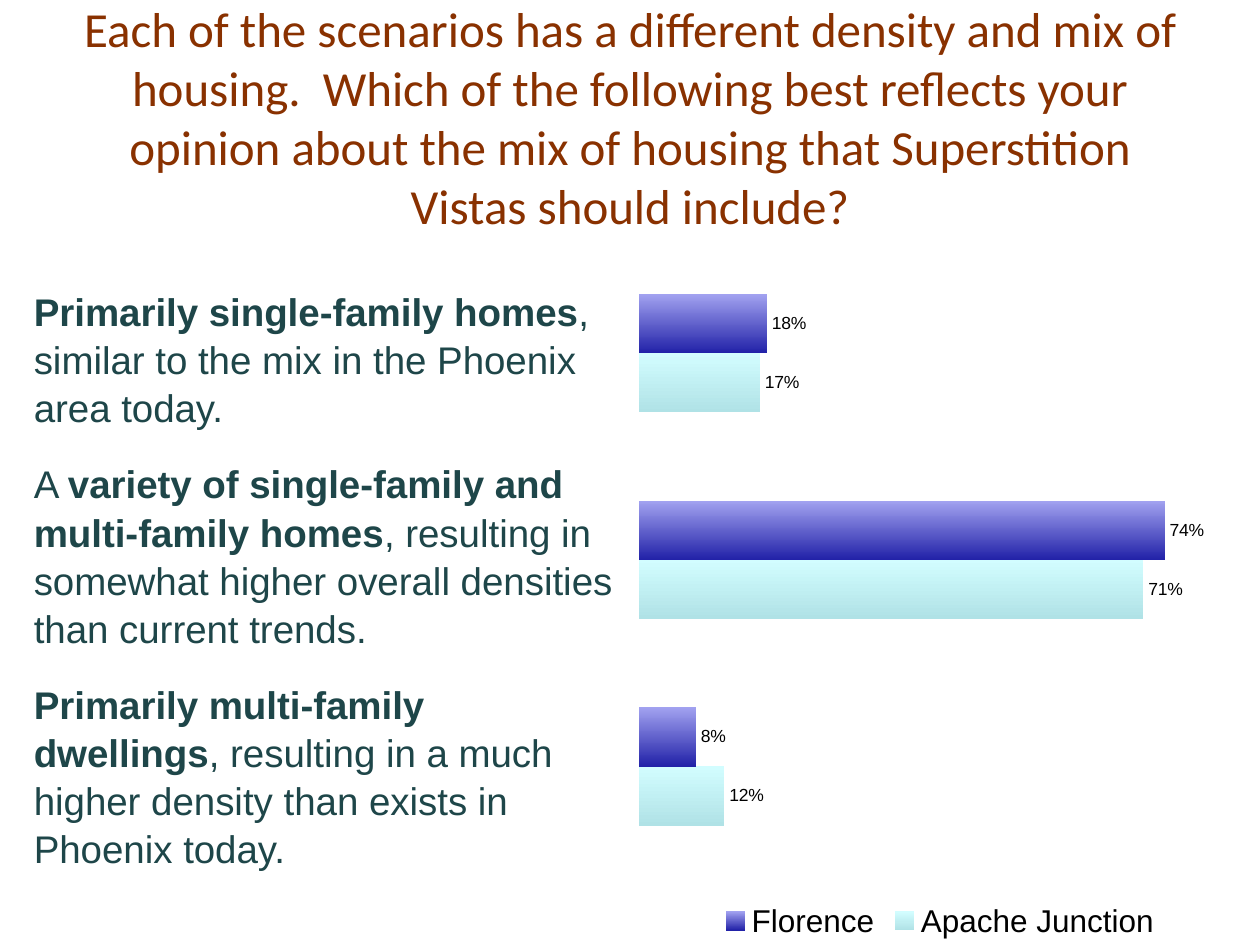
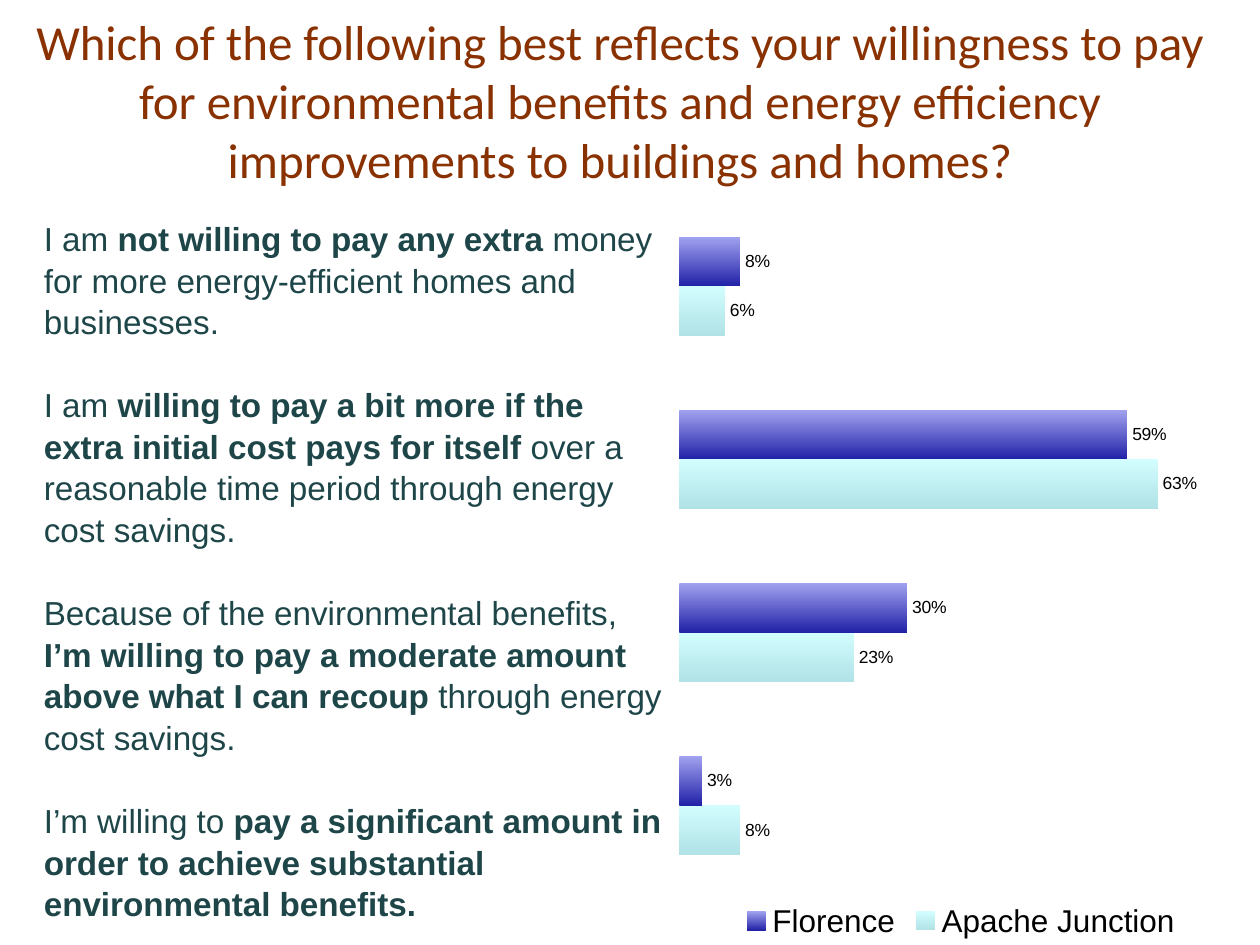
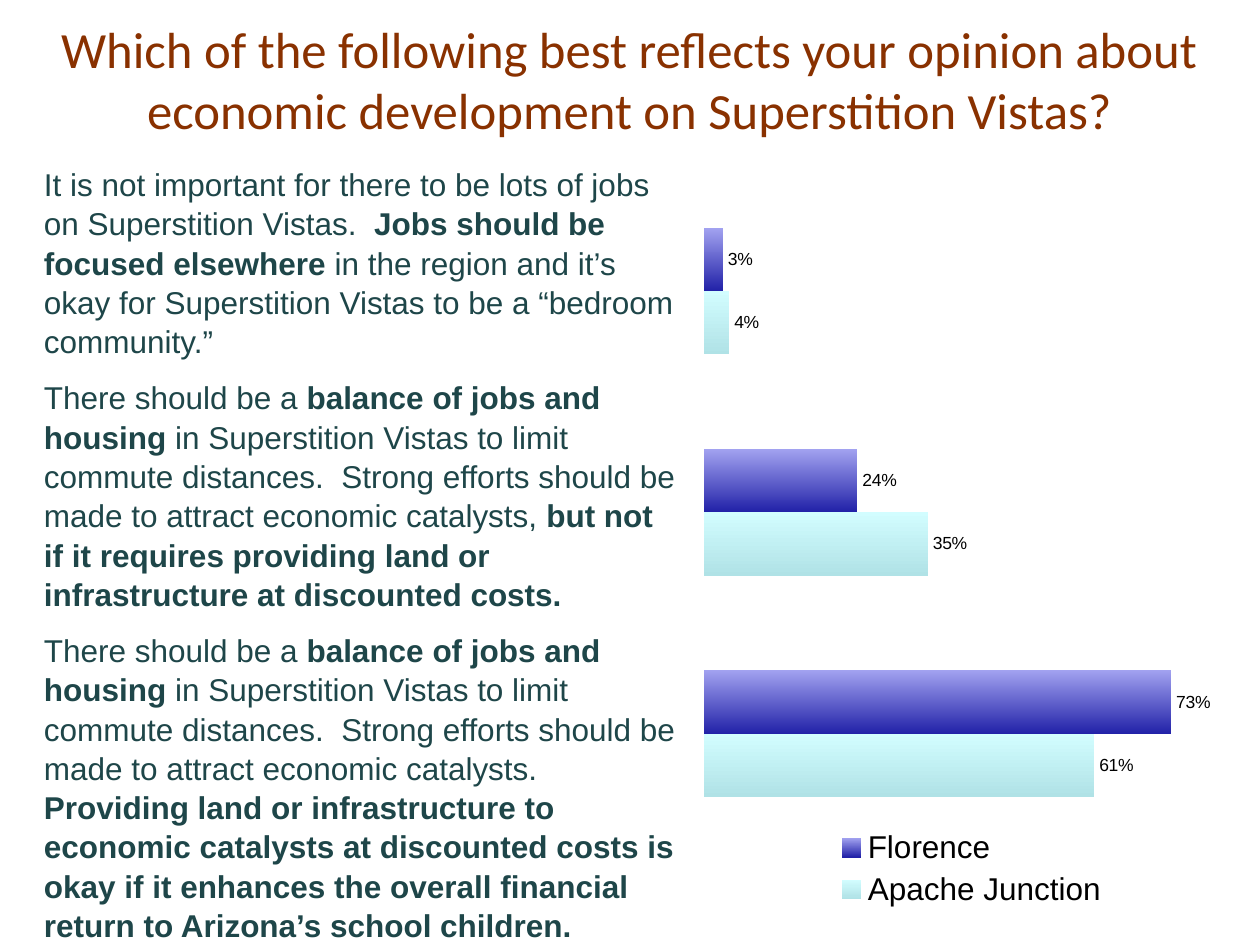
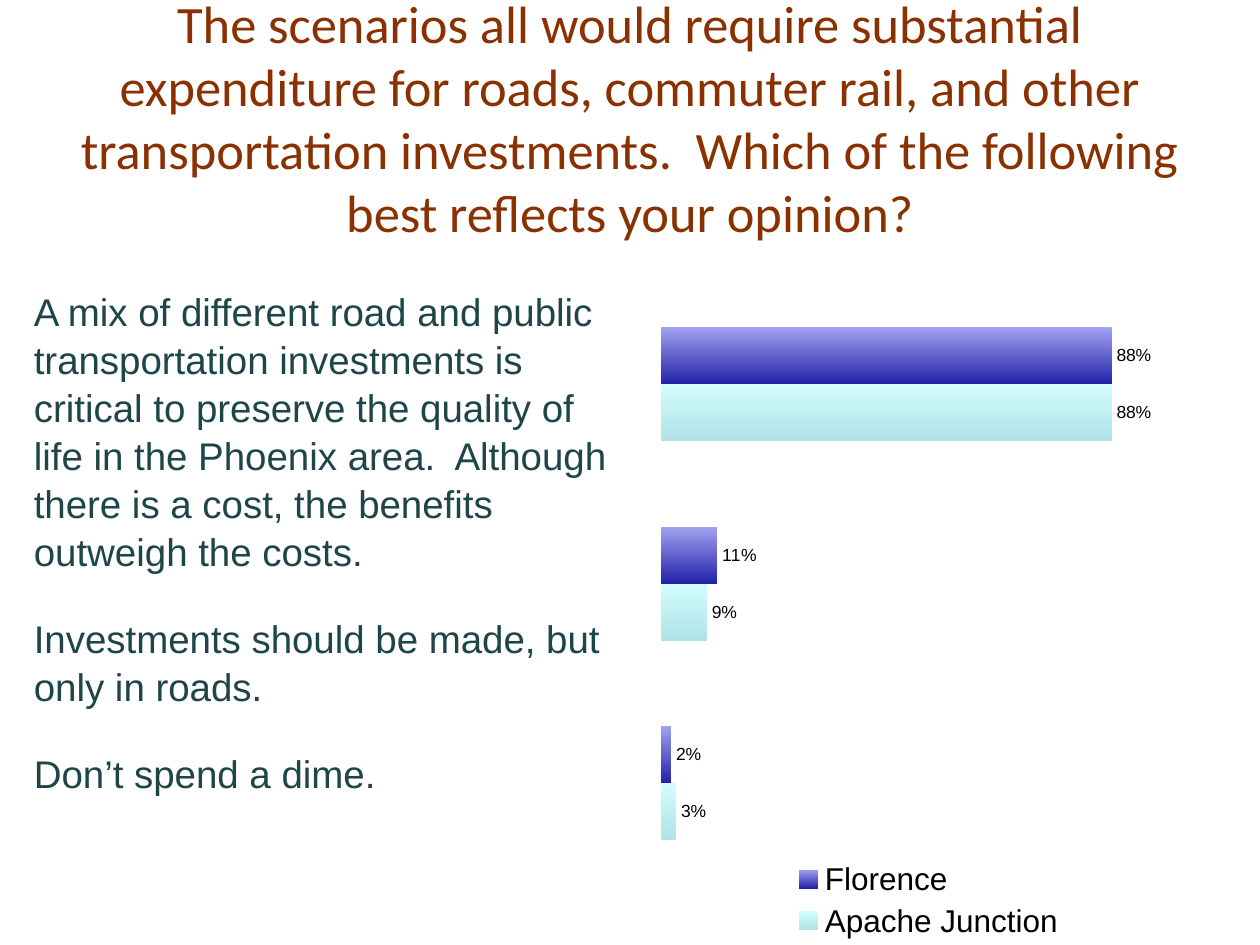
from dataclasses import dataclass

from lxml.etree import SubElement
from pptx import Presentation
from pptx.chart.data import CategoryChartData
from pptx.dml.color import RGBColor
from pptx.enum.chart import XL_CHART_TYPE, XL_LABEL_POSITION, XL_LEGEND_POSITION
from pptx.enum.text import MSO_ANCHOR, MSO_AUTO_SIZE, PP_ALIGN
from pptx.oxml.ns import qn
from pptx.util import Inches, Pt

RUST = RGBColor(0x89, 0x31, 0x00)
DARK_TEAL = RGBColor(0x1E, 0x46, 0x49)
BLACK = RGBColor(0x00, 0x00, 0x00)
TOWN_GRADIENTS = {
    "Apache Junction": (RGBColor(0xD2, 0xFD, 0xFF), RGBColor(0xB0, 0xE2, 0xE6)),
    "Florence": (RGBColor(0xA2, 0xA2, 0xF0), RGBColor(0x22, 0x22, 0xA8)),
}
TITLE_FONT = "Calibri"
BODY_FONT = "Arial"
LINE_SPACING = 1.04


@dataclass
class Question:
    """A survey question, its answers (bold between asterisks) and the votes per town."""

    title: str
    title_size: int
    title_box: tuple
    answers: list
    answer_size: int
    answer_box: tuple
    space_before: float
    space_after: int
    votes: dict
    axis_max: float
    chart_box: tuple
    plot_box: tuple
    inset: float = 0.05


QUESTIONS = [
    Question(
        title="Each of the scenarios has a different density and mix of housing.  Which of the "
        "following best reflects your opinion about the mix of housing that Superstition "
        "Vistas should include?",
        title_size=28,
        title_box=(0.5, 0.3, 9, 1.25),
        answers=[
            "*Primarily single-family homes*, similar to the mix in the Phoenix area today.",
            "A *variety of single-family and multi-family homes*, resulting in somewhat higher "
            "overall densities than current trends.",
            "*Primarily multi-family dwellings*, resulting in a much higher density than exists "
            "in Phoenix today.",
        ],
        answer_size=22,
        answer_box=(0.17, 2.22, 4.83, 4.95),
        space_before=4.4,
        space_after=12,
        votes={"Apache Junction": (0.12, 0.71, 0.17), "Florence": (0.08, 0.74, 0.18)},
        axis_max=0.8,
        chart_box=(4.92, 1.83, 5.08, 5.67),
        plot_box=(0.03, 0.027, 0.888, 0.868),
    ),
    Question(
        title="Which of the following best reflects your willingness to pay for environmental "
        "benefits and energy efficiency improvements to buildings and homes?",
        title_size=28,
        title_box=(0.17, 0.17, 9.5, 1.25),
        answers=[
            "I am *not willing to pay any extra *money for more energy-efficient homes and "
            "businesses.",
            "I am *willing to pay a bit more if the extra initial cost pays for itself *over a "
            "reasonable time period through energy cost savings.",
            "Because of the environmental benefits, *I’m willing to pay a moderate amount above "
            "what I can recoup *through energy cost savings.",
            "I’m willing to *pay a significant amount in order to achieve substantial "
            "environmental benefits.*",
        ],
        answer_size=19,
        answer_box=(0.25, 1.58, 5.17, 5.75),
        space_before=0,
        space_after=24,
        votes={"Apache Junction": (0.08, 0.23, 0.63, 0.06), "Florence": (0.03, 0.3, 0.59, 0.08)},
        axis_max=0.7,
        chart_box=(5.25, 1.42, 4.75, 6.08),
        plot_box=(0.03, 0.027, 0.888, 0.904),
        inset=0.14,
    ),
    Question(
        title="Which of the following best reflects your opinion about economic development on "
        "Superstition Vistas?",
        title_size=29,
        title_box=(0, 0, 10, 1.25),
        answers=[
            "It is not important for there to be lots of jobs on Superstition Vistas.  *Jobs "
            "should be focused elsewhere *in the region and it’s okay for Superstition Vistas "
            "to be a “bedroom community.”",
            "There should be a *balance of jobs and housing *in Superstition Vistas to limit "
            "commute distances.  Strong efforts should be made to attract economic catalysts, "
            "*but not if it requires providing land or infrastructure at discounted costs.*",
            "There should be a *balance of jobs and housing *in Superstition Vistas to limit "
            "commute distances.  Strong efforts should be made to attract economic catalysts.  "
            "*Providing land or infrastructure to economic catalysts at discounted costs is "
            "okay if it enhances the overall financial return to Arizona’s school children.*",
        ],
        answer_size=18,
        answer_box=(0.25, 1.25, 5.25, 5.75),
        space_before=3.6,
        space_after=6,
        votes={"Apache Junction": (0.61, 0.35, 0.04), "Florence": (0.73, 0.24, 0.03)},
        axis_max=0.8,
        chart_box=(5.42, 1.42, 4.58, 5.83),
        plot_box=(0.036, 0.002, 0.888, 0.904),
    ),
    Question(
        title="The scenarios all would require substantial expenditure for roads, commuter "
        "rail, and other transportation investments.  Which of the following best reflects "
        "your opinion?",
        title_size=30,
        title_box=(0.5, 0.3, 9, 1.25),
        answers=[
            "A mix of different road and public transportation investments is critical to "
            "preserve the quality of life in the Phoenix area.  Although there is a cost, the "
            "benefits outweigh the costs.",
            "Investments should be made, but only in roads.",
            "Don’t spend a dime.",
        ],
        answer_size=22,
        answer_box=(0.17, 2.22, 4.92, 4.95),
        space_before=4.4,
        space_after=18,
        votes={"Apache Junction": (0.03, 0.09, 0.88), "Florence": (0.02, 0.11, 0.88)},
        axis_max=1,
        chart_box=(5.08, 2.25, 4.58, 5.25),
        plot_box=(0.036, 0.002, 0.888, 0.904),
    ),
]


def set_font(font, name, size, color):
    """Apply a typeface, a size in points and a colour."""
    font.name = name
    font.size = Pt(size)
    font.color.rgb = color


def place_title(slide, question):
    """Move the title placeholder to its box and style the question."""
    title = slide.shapes.title
    title.left, title.top, title.width, title.height = map(Inches, question.title_box)
    frame = title.text_frame
    frame.text = question.title
    frame.auto_size = MSO_AUTO_SIZE.NONE
    frame.vertical_anchor = MSO_ANCHOR.MIDDLE
    heading = frame.paragraphs[0]
    heading.alignment = PP_ALIGN.CENTER
    set_font(heading.runs[0].font, TITLE_FONT, question.title_size, RUST)


def add_answers(slide, question):
    """Write the answers in the left column, one paragraph each."""
    frame = slide.shapes.add_textbox(*map(Inches, question.answer_box)).text_frame
    frame.word_wrap = True
    frame.margin_top = frame.margin_bottom = Inches(question.inset)
    for index, answer in enumerate(question.answers):
        paragraph = frame.add_paragraph() if index else frame.paragraphs[0]
        paragraph.space_before = Pt(question.space_before if index else 0)
        paragraph.space_after = Pt(question.space_after)
        paragraph.line_spacing = LINE_SPACING
        for position, phrase in enumerate(answer.split("*")):
            if phrase:
                run = paragraph.add_run()
                run.text = phrase
                set_font(run.font, BODY_FONT, question.answer_size, DARK_TEAL)
                run.font.bold = position % 2 == 1


def set_plot_layout(chart, plot_box):
    """Fix the inner plot area at fractions of the chart."""
    plot_area = chart.plots[0].series[0].format.fill and chart.element.find(
        f"{qn('c:chart')}/{qn('c:plotArea')}"
    )
    layout = plot_area.find(qn("c:layout"))
    if layout is None:
        layout = SubElement(plot_area, qn("c:layout"))
        plot_area.insert(0, layout)
    manual = SubElement(layout, qn("c:manualLayout"))
    settings = [("layoutTarget", "inner"), ("xMode", "edge"), ("yMode", "edge")]
    settings += zip("xywh", plot_box)
    for tag, value in settings:
        SubElement(manual, qn(f"c:{tag}")).set("val", str(value))


def add_votes(slide, question):
    """Draw the bars of both towns beside the answers."""
    chart_data = CategoryChartData(number_format="0%")
    answer_count = len(question.answers)
    chart_data.categories = [str(number) for number in range(1, answer_count + 1)]
    for town, shares in question.votes.items():
        chart_data.add_series(town, shares)
    chart = slide.shapes.add_chart(
        XL_CHART_TYPE.BAR_CLUSTERED, *map(Inches, question.chart_box), chart_data
    ).chart
    set_font(chart.font, BODY_FONT, 18, BLACK)
    chart.has_title = False
    chart.has_legend = True
    chart.legend.position = XL_LEGEND_POSITION.BOTTOM
    chart.legend.include_in_layout = False
    chart.category_axis.visible = False
    share_axis = chart.value_axis
    share_axis.visible = False
    share_axis.has_major_gridlines = False
    share_axis.minimum_scale = 0
    share_axis.maximum_scale = question.axis_max
    share_axis.tick_labels.number_format = "0%"
    share_axis.tick_labels.number_format_is_linked = False
    bars = chart.plots[0]
    bars.gap_width = 150
    bars.overlap = 0
    bars.vary_by_categories = False
    for town_bars in bars.series:
        fill = town_bars.format.fill
        fill.gradient()
        fill.gradient_angle = 270
        for stop, color in zip(fill.gradient_stops, TOWN_GRADIENTS[town_bars.name]):
            stop.color.rgb = color
        labels = town_bars.data_labels
        labels.show_value = True
        labels.number_format = "0%"
        labels.number_format_is_linked = False
        labels.position = XL_LABEL_POSITION.OUTSIDE_END
        set_font(labels.font, BODY_FONT, 10, BLACK)
    set_plot_layout(chart, question.plot_box)


def add_question_slide(deck, question):
    """Add one slide with a question, its answers and the votes."""
    slide = deck.slides.add_slide(deck.slide_layouts[5])
    place_title(slide, question)
    add_answers(slide, question)
    add_votes(slide, question)


def main():
    """Build the deck and save it."""
    deck = Presentation()
    deck.slide_width, deck.slide_height = Inches(10), Inches(7.5)
    for question in QUESTIONS:
        add_question_slide(deck, question)
    deck.save("out.pptx")


if __name__ == "__main__":
    main()
